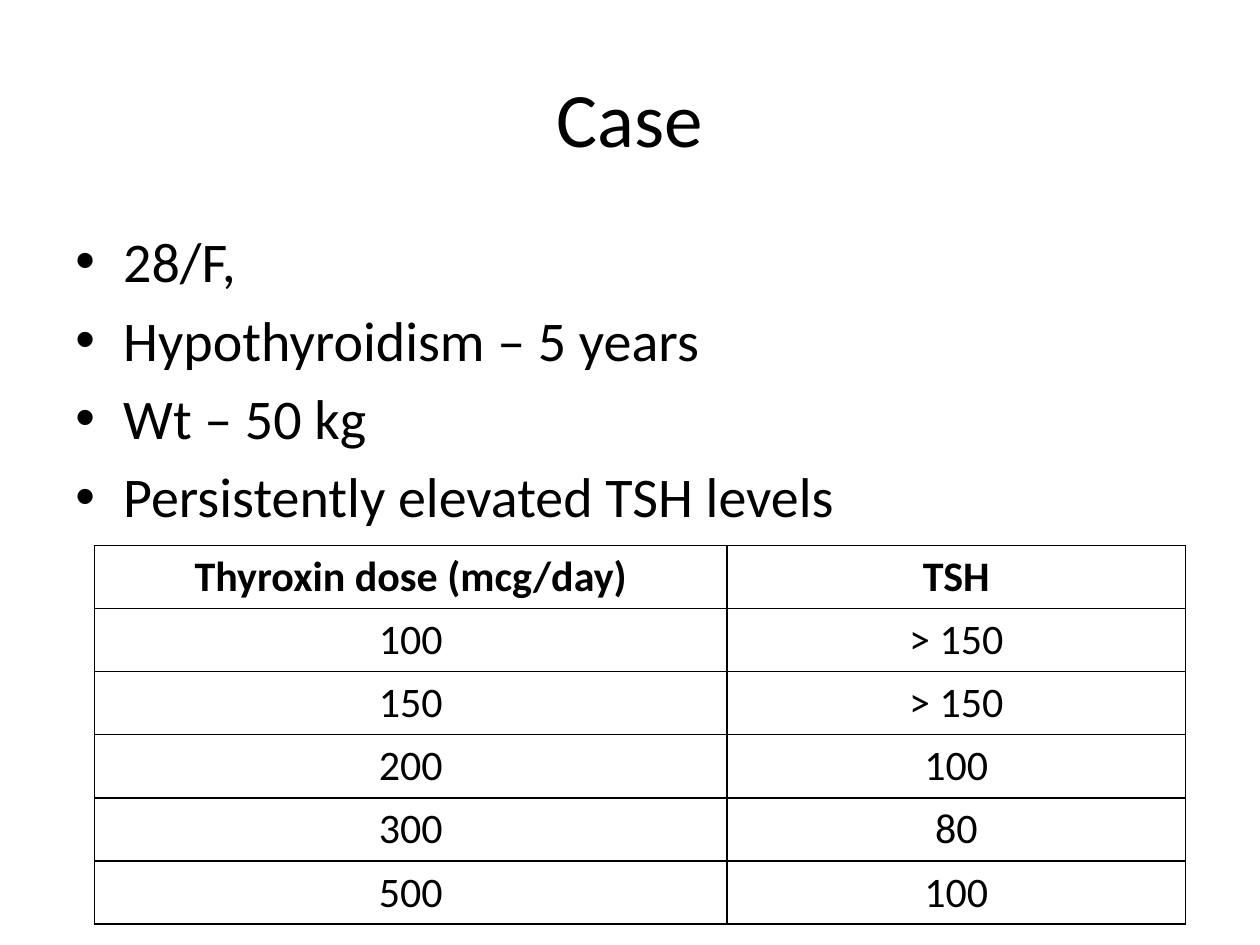
import pptx
import pptx.util
import pptx.dml.color
import pptx.enum.text
import pptx.oxml
import pptx.oxml.ns
from pptx.util import Inches

BLACK = pptx.dml.color.RGBColor(0, 0, 0)
WHITE = pptx.dml.color.RGBColor(255, 255, 255)
CENTER = pptx.enum.text.PP_ALIGN.CENTER
MIDDLE = pptx.enum.text.MSO_ANCHOR.MIDDLE
NS = pptx.oxml.ns.nsdecls("a")


def add_run(para, text, size, bold=False):
    run = para.add_run()
    run.text = text
    run.font.name = "Calibri"
    run.font.size = pptx.util.Pt(size)
    run.font.bold = bold
    run.font.color.rgb = BLACK


def add_box(left, top, width, height):
    box = slide.shapes.add_textbox(Inches(left), Inches(top), Inches(width), Inches(height))
    box.text_frame.word_wrap = True
    return box.text_frame


deck = pptx.Presentation()
deck.slide_width = Inches(10)
deck.slide_height = Inches(7.5)
slide = deck.slides.add_slide(deck.slide_layouts[6])

title = add_box(0.5, 0.3, 9, 1.25)
title.vertical_anchor = MIDDLE
title.paragraphs[0].alignment = CENTER
add_run(title.paragraphs[0], "Case", 44)

facts = ["28/F,", "Hypothyroidism – 5 years", "Wt – 50 kg", "Persistently elevated TSH levels"]
body = add_box(0.5, 1.75, 9, 4.95)
for i, fact in enumerate(facts):
    para = body.add_paragraph() if i else body.paragraphs[0]
    para.space_before = pptx.util.Pt(6.4)
    props = para._p.get_or_add_pPr()
    props.set("marL", str(Inches(0.38)))
    props.set("indent", str(Inches(-0.38)))
    props.append(pptx.oxml.parse_xml(f'<a:buFont {NS} typeface="Arial"/>'))
    props.append(pptx.oxml.parse_xml(f'<a:buChar {NS} char="•"/>'))
    add_run(para, fact, 32)

rows = [
    ("Thyroxin dose (mcg/day)", "TSH"),
    ("100", "> 150"),
    ("150", "> 150"),
    ("200", "100"),
    ("300", "80"),
    ("500", "100"),
]
frame = slide.shapes.add_table(len(rows), 2, Inches(0.75), Inches(4.33), Inches(8.66), Inches(3))
table = frame.table
table.columns[0].width = Inches(5.02)
table.columns[1].width = Inches(3.64)
for r, row in enumerate(rows):
    for c, text in enumerate(row):
        cell = table.cell(r, c)
        para = cell.text_frame.paragraphs[0]
        para.alignment = CENTER
        add_run(para, text, 24, r == 0)
        props = cell._tc.get_or_add_tcPr()
        for side in ("lnL", "lnR", "lnT", "lnB"):
            props.append(pptx.oxml.parse_xml(
                f'<a:{side} {NS} w="12700"><a:solidFill><a:srgbClr val="{BLACK}"/>'
                f'</a:solidFill></a:{side}>'))
        cell.fill.solid()
        cell.fill.fore_color.rgb = WHITE

deck.save("out.pptx")
